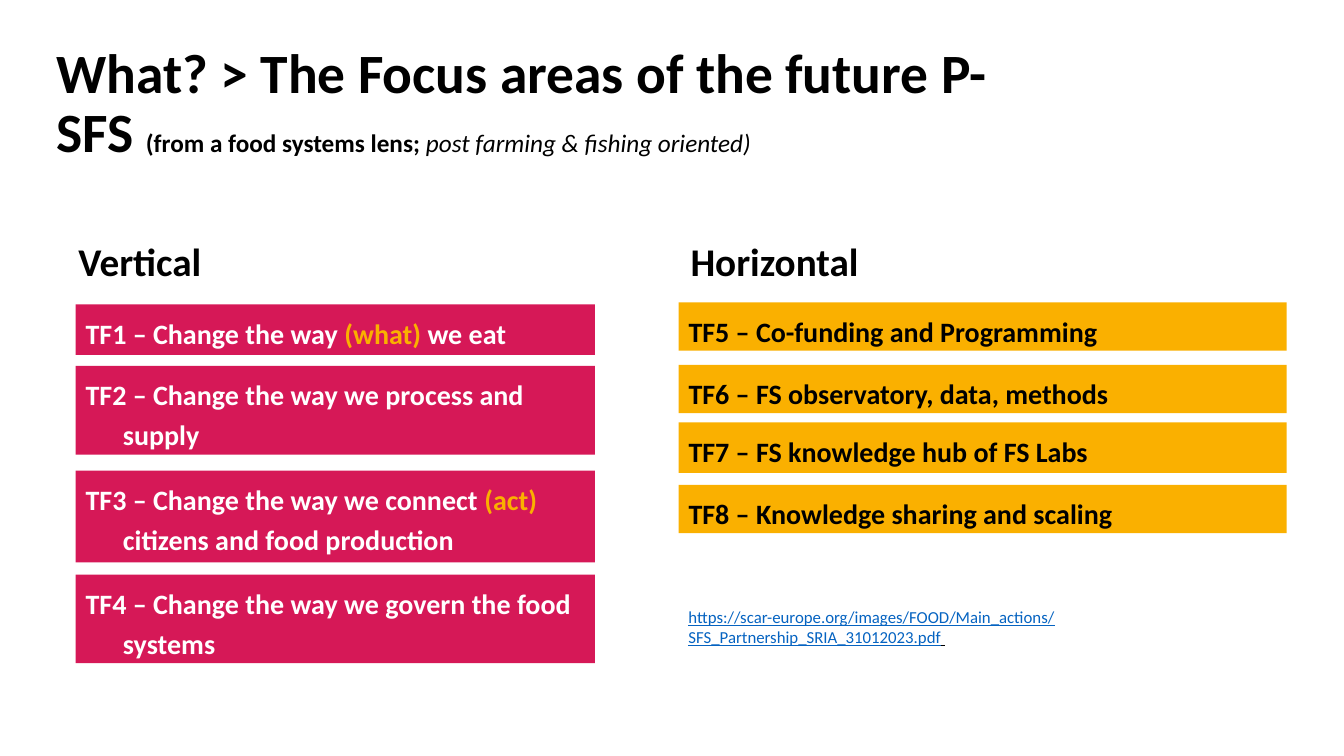
from pptx import Presentation
from pptx import util as u
from pptx.dml.color import RGBColor
from pptx.enum import shapes, text

WIDE, HIGH = u.Inches(13.33), u.Inches(7.5)
PINK = RGBColor(0xD6, 0x18, 0x57)
GOLD = RGBColor(0xFA, 0xB0, 0x00)
BLUE = RGBColor(0x05, 0x63, 0xC1)
BLACK = RGBColor(0, 0, 0)
WHITE = RGBColor(255, 255, 255)
HANG = u.Inches(0.37)


def place(box):
    left, top, width, height = box
    return [int(size * share / 100) for size, share in
            ((WIDE, left), (HIGH, top), (WIDE, width), (HIGH, height))]


def write(shape, parts, anchor=text.MSO_ANCHOR.TOP, lead=1.0):
    frame = shape.text_frame
    frame.word_wrap = True
    frame.vertical_anchor = anchor
    line = frame.paragraphs[0]
    line.alignment = text.PP_ALIGN.LEFT
    line.line_spacing = lead
    for words, size, color, style in parts:
        run = line.add_run()
        run.text = words
        font = run.font
        font.name, font.size = "Calibri", u.Pt(size)
        font.color.rgb = color
        font.bold = "b" in style
        font.italic = "i" in style
        font.underline = "u" in style
    return line


def label(slide, box, parts, **look):
    write(slide.shapes.add_textbox(*place(box)), parts, **look)


def bar(slide, box, fill, parts):
    shape = slide.shapes.add_shape(shapes.MSO_SHAPE.RECTANGLE, *place(box))
    shape.shadow.inherit = False
    shape.fill.solid()
    shape.fill.fore_color.rgb = fill
    shape.line.fill.background()
    line = write(shape, parts, lead=1.2)
    line.space_after = u.Pt(10)
    props = line._p.get_or_add_pPr()
    props.set("marL", str(HANG))
    props.set("indent", str(-HANG))


def column(slide, box, head, shift, fill, ink, rows):
    left, top, width = box
    label(slide, (left + shift, top, width + 2, 7.6),
          [(head, 28, BLACK, "b")], anchor=text.MSO_ANCHOR.MIDDLE, lead=0.9)
    for drop, height, words in rows:
        parts = [(word, 20, GOLD if word.startswith("(") else ink, "b")
                 for word in words]
        bar(slide, (left, top + drop, width, height), fill, parts)


def title(slide, box):
    label(slide, box, [
        ("What? > The Focus areas of the future P-SFS ", 39.6, BLACK, "b"),
        ("(from a food systems lens; ", 18, BLACK, "b"),
        ("post farming & fishing oriented)", 18, BLACK, "i"),
    ], lead=0.9)


def source(slide, box):
    label(slide, box, [
        ("https://scar-europe.org/images/FOOD/Main_actions/"
         "SFS_Partnership_SRIA_31012023.pdf", 12, BLUE, "u"),
        (" ", 12, BLACK, "u"),
    ])


def main():
    deck = Presentation()
    deck.slide_width, deck.slide_height = WIDE, HIGH
    slide = deck.slides.add_slide(deck.slide_layouts[6])
    title(slide, (3.45, 5.33, 71.64, 19.33))
    column(slide, (5.63, 31.07, 38.63), "Vertical", -0.53, PINK, WHITE, [
        (9.2, 6.67, ["TF1 – Change the way ", "(what) ", "we eat"]),
        (17.33, 11.73, ["TF2 – Change the way we process and supply"]),
        (31.2, 12.13, ["TF3 – Change the way we connect ", "(act) ",
                       "citizens and food production"]),
        (44.93, 11.73, ["TF4 – Change the way we govern the food systems"]),
    ])
    column(slide, (50.49, 31.07, 45.24), "Horizontal", 0.15, GOLD, BLACK, [
        (8.93, 6.4, ["TF5 – Co-funding and Programming"]),
        (17.2, 6.4, ["TF6 – FS observatory, data, methods"]),
        (24.8, 6.67, ["TF7 – FS knowledge hub of FS Labs"]),
        (33.07, 6.4, ["TF8 – Knowledge sharing and scaling"]),
    ])
    source(slide, (50.49, 79.6, 45, 6.67))
    deck.save("out.pptx")


if __name__ == "__main__":
    main()
